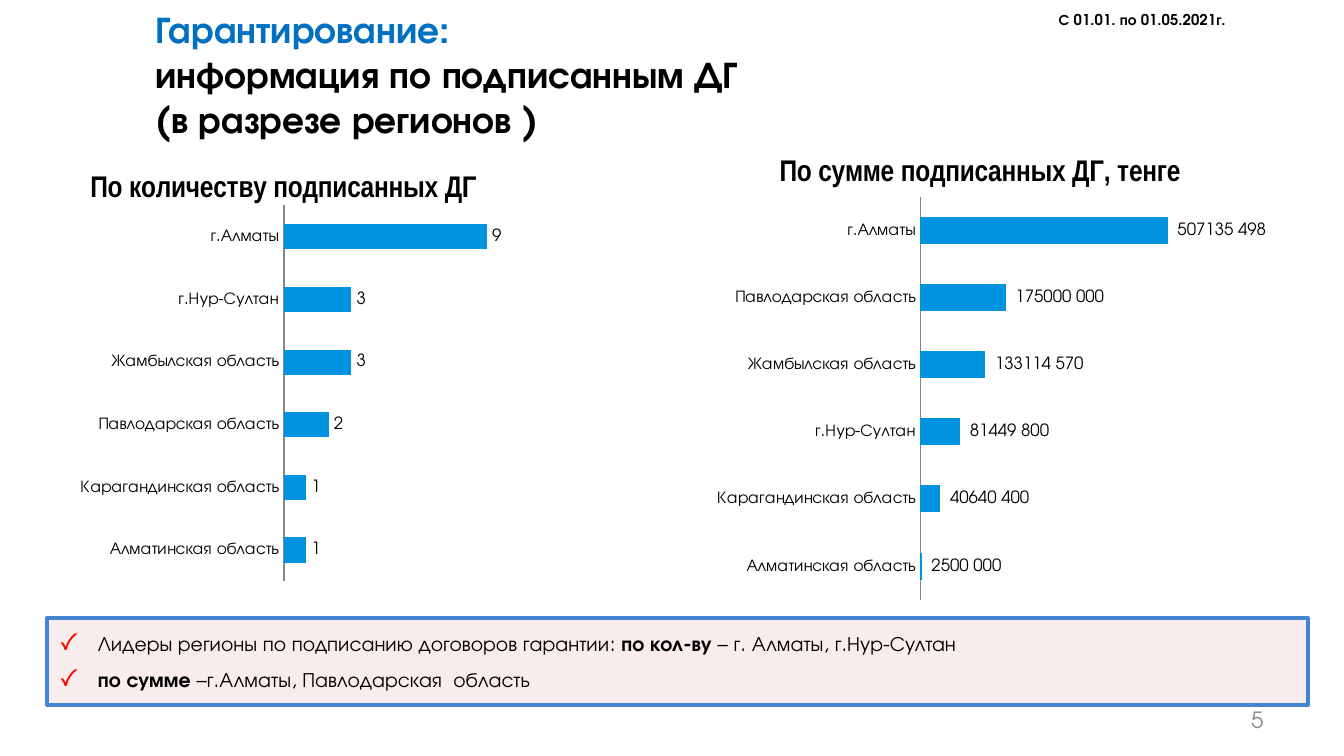
from typing import NamedTuple

from lxml.etree import SubElement as Sub
from pptx import Presentation as Deck
from pptx.chart.data import CategoryChartData as Data
from pptx.enum.chart import XL_CHART_TYPE as Kind
from pptx.enum.chart import XL_LABEL_POSITION as Spot
from pptx.enum.chart import XL_TICK_MARK as Tick
from pptx.dml.color import RGBColor as Rgb
from pptx.enum.shapes import MSO_SHAPE as Form
from pptx.enum.text import MSO_ANCHOR as Anchor
from pptx.enum.text import PP_ALIGN as Align
from pptx.oxml.ns import qn
from pptx.util import Cm, Pt

FACE = "TeX Gyre Adventor"
COLORS = {
    "black": "000000",
    "blue": "0070C0",
    "bar": "0293E0",
    "axis": "868686",
    "gray": "8C8C8C",
    "pink": "F2DCDB",
    "edge": "4584D3",
    "red": "FF0000",
}


class Area(NamedTuple):
    left: float
    top: float
    width: float
    height: float

    def place(self) -> list:
        return [Cm(side) for side in self]


class Graph(NamedTuple):
    title: str
    area: Area
    plot: Area
    rows: dict
    top: int
    mask: str
    line: float


GRAPHS = [
    Graph(
        "По количеству подписанных ДГ",
        Area(0.51, 2.87, 9.7, 8.46),
        Area(0.5, 0.12, 0.44, 0.84),
        {
            "Алматинская область": 1,
            "Карагандинская область": 1,
            "Павлодарская область": 2,
            "Жамбылская область": 3,
            "г.Нур-Султан": 3,
            "г.Алматы": 9,
        },
        10,
        "General",
        1,
    ),
    Graph(
        "По сумме подписанных ДГ, тенге",
        Area(12.24, 2.54, 12.57, 9.07),
        Area(0.41, 0.13, 0.44, 0.84),
        {
            "Алматинская область": 2500000,
            "Карагандинская область": 40640400,
            "г.Нур-Султан": 81449800,
            "Жамбылская область": 133114570,
            "Павлодарская область": 175000000,
            "г.Алматы": 507135498,
        },
        600000000,
        r"_-* #\ ##0_р_._-",
        0.25,
    ),
]

LEADERS = [
    [
        ("Лидеры регионы по подписанию договоров гарантии: ", False),
        ("по кол-ву", True),
        (" – г. Алматы, г.Нур-Султан", False),
    ],
    [("по сумме ", True), ("–г.Алматы, Павлодарская  область", False)],
]


def tint(name: str) -> Rgb:
    return Rgb.from_string(COLORS[name])


def style(font, size: float, color: str = "black", bold: bool = False, face: str = FACE) -> None:
    font.size = Pt(size)
    font.bold = bold
    font.name = face
    font.color.rgb = tint(color)


def put(para, text: str, **form) -> None:
    run = para.add_run()
    run.text = text
    style(run.font, **form)


def add_box(slide, area: Area, wrap: bool = True):
    frame = slide.shapes.add_textbox(*area.place()).text_frame
    frame.word_wrap = wrap
    return frame


def add_check(para) -> None:
    para.space_after = Pt(6)
    props = para._p.get_or_add_pPr()
    props.set("marL", str(Cm(0.76)))
    props.set("indent", str(-Cm(0.74)))
    hue = Sub(props, qn("a:buClr"))
    Sub(hue, qn("a:srgbClr"), val=COLORS["red"])
    Sub(props, qn("a:buSzPct"), val="125000")
    Sub(props, qn("a:buFont"), typeface=FACE)
    Sub(props, qn("a:buChar"), char="✓")


def set_plot(chart, plot: Area) -> None:
    area = chart._chartSpace.chart.plotArea
    for old in area.findall(qn("c:layout")):
        area.remove(old)
    layout = Sub(area, qn("c:layout"))
    area.insert(0, layout)
    inner = Sub(layout, qn("c:manualLayout"))
    Sub(inner, qn("c:layoutTarget"), val="inner")
    for tag in ("xMode", "yMode"):
        Sub(inner, qn(f"c:{tag}"), val="edge")
    for tag, part in zip("xywh", plot):
        Sub(inner, qn(f"c:{tag}"), val=str(part))


def add_graph(slide, graph: Graph) -> None:
    data = Data(number_format=graph.mask)
    data.categories = list(graph.rows)
    data.add_series("Series 1", list(graph.rows.values()))
    chart = slide.shapes.add_chart(Kind.BAR_CLUSTERED, *graph.area.place(), data).chart
    style(chart.font, size=10)
    chart.has_legend = False
    chart.has_title = True
    head = chart.chart_title.text_frame.paragraphs[0]
    put(head, graph.title, size=16, bold=True, face="Arial Narrow")
    set_plot(chart, graph.plot)

    names = chart.category_axis
    names.major_tick_mark = names.minor_tick_mark = Tick.NONE
    names.has_major_gridlines = False
    names.format.line.color.rgb = tint("axis")
    names.format.line.width = Pt(graph.line)
    style(names.tick_labels.font, size=9)

    scale = chart.value_axis
    scale.minimum_scale = 0
    scale.maximum_scale = graph.top
    scale.has_major_gridlines = False
    scale.visible = False

    plot = chart.plots[0]
    plot.gap_width = 150
    plot.vary_by_categories = False
    fill = plot.series[0].format.fill
    fill.solid()
    fill.fore_color.rgb = tint("bar")
    labels = plot.series[0].data_labels
    labels.show_value = True
    labels.position = Spot.OUTSIDE_END
    labels.number_format = graph.mask
    labels.number_format_is_linked = False
    style(labels.font, size=9)


def add_panel(slide, area: Area) -> None:
    panel = slide.shapes.add_shape(Form.RECTANGLE, *area.place())
    panel.shadow.inherit = False
    panel.fill.solid()
    panel.fill.fore_color.rgb = tint("pink")
    hue = panel.fill._xPr.find(f".//{qn('a:srgbClr')}")
    Sub(hue, qn("a:alpha"), val="50000")
    panel.line.color.rgb = tint("edge")
    panel.line.width = Pt(2)
    frame = panel.text_frame
    frame.word_wrap = True
    frame.vertical_anchor = Anchor.MIDDLE
    frame.margin_left = frame.margin_right = Cm(0.2)
    frame.margin_top = frame.margin_bottom = Cm(0.1)
    for row, parts in enumerate(LEADERS):
        para = frame.add_paragraph() if row else frame.paragraphs[0]
        para.alignment = Align.LEFT
        add_check(para)
        for text, bold in parts:
            put(para, text, size=11, bold=bold)


def main() -> None:
    deck = Deck()
    deck.slide_width, deck.slide_height = Cm(25.4), Cm(14.29)
    slide = deck.slides.add_slide(deck.slide_layouts[6])

    page = add_box(slide, Area(18.21, 13.23, 5.92, 0.76))
    page.vertical_anchor = Anchor.MIDDLE
    page.paragraphs[0].alignment = Align.RIGHT
    put(page.paragraphs[0], "5", size=12, color="gray")

    title = add_box(slide, Area(2.69, 0, 17.81, 2.26))
    head = title.paragraphs[0]
    put(head, "Гарантирование:", size=20, color="blue", bold=True)
    head.add_line_break()
    put(head, "информация по подписанным ДГ", size=20, bold=True)
    put(title.add_paragraph(), "(в разрезе регионов )", size=20, bold=True)

    add_panel(slide, Area(0.89, 11.68, 23.83, 1.65))
    dates = add_box(slide, Area(19.76, 0.08, 3.76, 0.61), wrap=False)
    put(dates.paragraphs[0], "С 01.01. по 01.05.2021г.", size=8, bold=True)
    for graph in GRAPHS:
        add_graph(slide, graph)
    deck.save("out.pptx")


if __name__ == "__main__":
    main()
